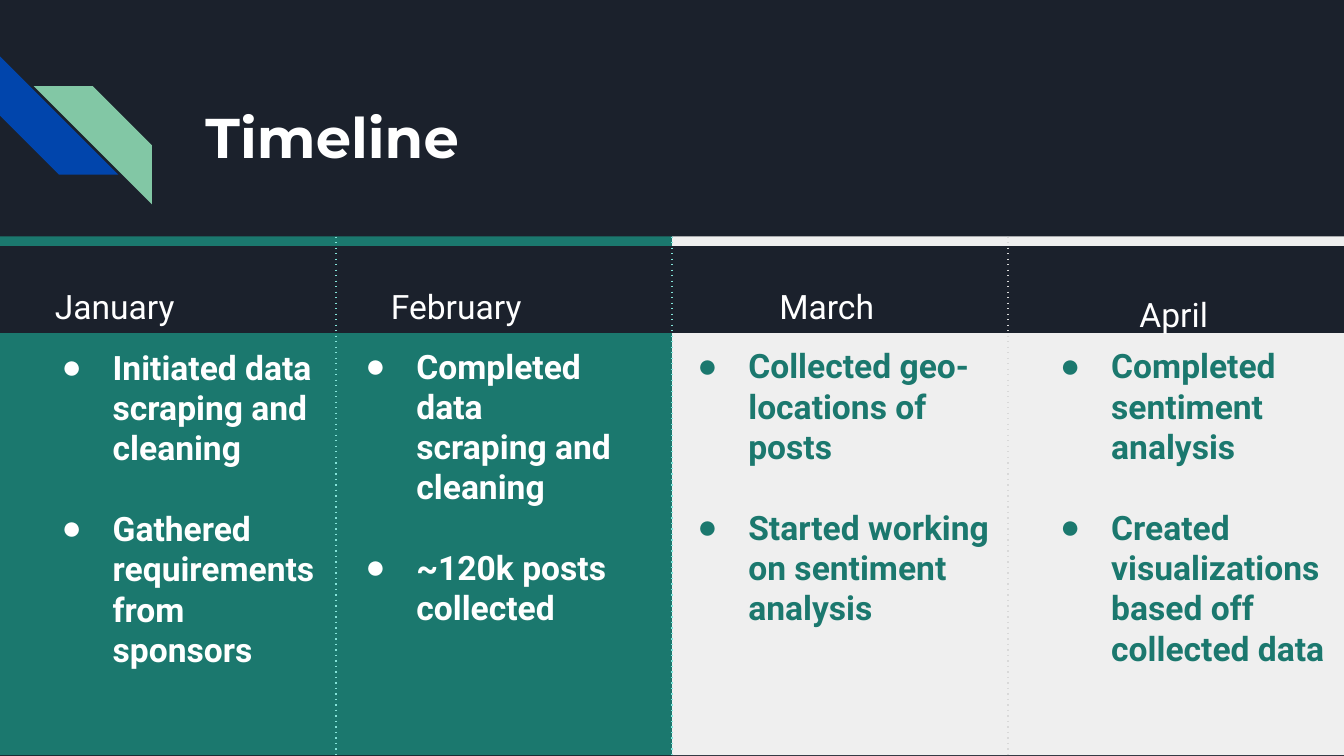
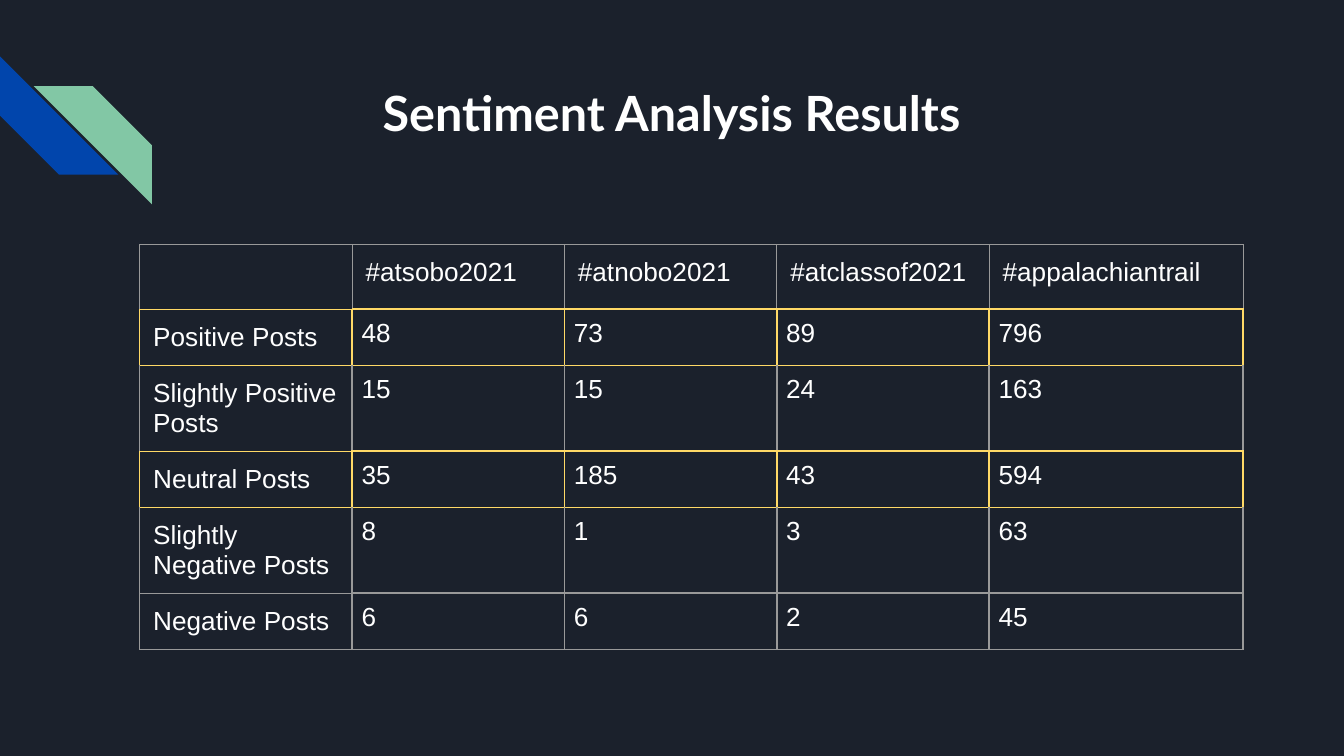
from dataclasses import dataclass

from lxml import etree
from pptx import Presentation
from pptx import util as u
from pptx.dml.color import RGBColor
from pptx.enum import shapes, text
from pptx.oxml.ns import qn


@dataclass(frozen=True)
class Theme:
    dark: str = "1B212C"
    white: str = "FFFFFF"
    teal: str = "1B786E"
    pale: str = "EFEFEF"
    blue: str = "0145AC"
    green: str = "82C7A5"
    aqua: str = "83E3D9"
    silver: str = "D9D9D9"
    grey: str = "999999"
    gold: str = "FFD966"
    heading_font: str = "Montserrat"
    result_font: str = "Lato"
    body_font: str = "Roboto"
    table_font: str = "Arial"
    bullet_font: str = "Arial"
    heading_size: float = 30
    result_size: float = 26
    body_size: float = 18
    table_size: float = 14
    bullet_gap: float = 21.6


def color(value):
    return RGBColor.from_string(value)


def box(*lengths):
    return [u.Inches(length) for length in lengths]


class Deck:
    def __init__(self, theme):
        self.theme = theme
        self.presentation = Presentation()
        # Widescreen, 16 to 9
        self.presentation.slide_width = u.Inches(10)
        self.presentation.slide_height = u.Inches(10 * 9 / 16)
        self.slide = None

    def add_slide(self):
        """Start a dark slide with the two corner stripes."""
        self.slide = self.presentation.slides.add_slide(self.presentation.slide_layouts[6])
        self.slide.background.fill.solid()
        self.slide.background.fill.fore_color.rgb = color(self.theme.dark)
        stripe = shapes.MSO_SHAPE.DIAGONAL_STRIPE
        lower = self.shape((0, 0.42, 0.88, 0.88), self.theme.blue, stripe)
        lower.rotation = 270
        upper = self.shape((0.25, 0.64, 0.88, 0.88), self.theme.green, stripe)
        upper.element.spPr.find(qn("a:xfrm")).set("flipH", "1")

    def shape(self, at, fill, kind=shapes.MSO_SHAPE.RECTANGLE):
        shape = self.slide.shapes.add_shape(kind, *box(*at))
        shape.shadow.inherit = False
        shape.fill.solid()
        shape.fill.fore_color.rgb = color(fill)
        shape.line.fill.background()
        return shape

    def style(self, paragraph, font, size, fill, bold=False):
        for run in paragraph.runs:
            run.font.name, run.font.size, run.font.bold = font, u.Pt(size), bold
            run.font.color.rgb = color(fill)

    def frame(self, shape, inset=0.1):
        frame = shape.text_frame
        frame.word_wrap = True
        frame.vertical_anchor = text.MSO_ANCHOR.TOP
        frame.margin_left = frame.margin_right = u.Inches(inset)
        frame.margin_top = frame.margin_bottom = u.Inches(inset)
        return frame

    def label(self, at, words, font, size, bold=False, spacing=None):
        frame = self.frame(self.slide.shapes.add_textbox(*box(*at)))
        frame.text = words
        paragraph = frame.paragraphs[0]
        paragraph.line_spacing = spacing
        self.style(paragraph, font, size, self.theme.white, bold)

    def banner(self, at, words):
        """Centred title on a filled rectangle."""
        frame = self.frame(self.shape(at, self.theme.dark))
        frame.text = words
        frame.paragraphs[0].alignment = text.PP_ALIGN.CENTER
        self.style(frame.paragraphs[0], self.theme.result_font, self.theme.result_size,
                   self.theme.white, True)

    def bullets(self, at, items, fill):
        frame = self.frame(self.slide.shapes.add_textbox(*box(*at)))
        frame.text = "\n".join(items)
        for index, paragraph in enumerate(frame.paragraphs):
            if index:
                paragraph.space_before = u.Pt(self.theme.bullet_gap)
            properties = paragraph._p.get_or_add_pPr()
            properties.set("marL", str(u.Inches(0.5)))
            properties.set("indent", str(u.Inches(-0.38)))
            bullet_color = etree.SubElement(properties, qn("a:buClr"))
            etree.SubElement(bullet_color, qn("a:srgbClr"), val=fill)
            etree.SubElement(properties, qn("a:buFont"), typeface=self.theme.bullet_font)
            etree.SubElement(properties, qn("a:buChar"), char="●")
            self.style(paragraph, self.theme.body_font, self.theme.body_size, fill, True)

    def divider(self, x, top, bottom, fill):
        connector = self.slide.shapes.add_connector(
            shapes.MSO_CONNECTOR.STRAIGHT, *box(x, top, x, bottom))
        connector.line.color.rgb = color(fill)
        connector.line.width = u.Pt(0.75)
        properties = connector.element.spPr
        etree.SubElement(properties.find(qn("a:ln")), qn("a:prstDash"), val="dot")
        etree.SubElement(properties, qn("a:effectLst"))

    def border(self, cell, side, fill, width):
        line = etree.SubElement(cell._tc.get_or_add_tcPr(), qn("a:ln" + side),
                                w=str(u.Pt(width)))
        solid = etree.SubElement(line, qn("a:solidFill"))
        etree.SubElement(solid, qn("a:srgbClr"), val=fill)

    def fill_cell(self, cell, value, inset):
        cell.text = str(value)
        cell.margin_left = cell.margin_right = u.Inches(inset)
        cell.margin_top = cell.margin_bottom = u.Inches(inset)
        paragraph = cell.text_frame.paragraphs[0]
        size = self.theme.table_size
        self.style(paragraph, self.theme.table_font, size, self.theme.white)
        if not paragraph.runs:
            # An empty cell keeps the table's type size
            etree.SubElement(paragraph._p, qn("a:endParaRPr"), sz=str(size * 100))

    def table(self, left, top, widths, heights, rows, highlighted):
        at = box(left, top, sum(widths), sum(heights))
        table = self.slide.shapes.add_table(len(rows), len(widths), *at).table
        table.first_row = table.horz_banding = False
        for column, width in zip(table.columns, widths):
            column.width = u.Inches(width)
        for row, height in zip(table.rows, heights):
            row.height = u.Inches(height)
        sides = {"L": (0, -1), "R": (0, 1), "T": (-1, 0), "B": (1, 0)}
        for r, values in enumerate(rows):
            for c, value in enumerate(values):
                cell = table.cell(r, c)
                self.fill_cell(cell, value, 0.07 if r and c else 0.1)
                # Gold edges surround highlighted rows; value cells have thicker edges
                for side, (down, across) in sides.items():
                    gold = r in highlighted or r + down in highlighted
                    thick = min(r, c) > 0 or min(r + down, c + across) > 0
                    self.border(cell, side, self.theme.gold if gold else self.theme.grey,
                                1 if thick else 0.75)
                cell.fill.background()


def timeline(deck):
    theme = deck.theme
    deck.add_slide()
    deck.label((1.43, 0.66, 8.49, 1), "Timeline", theme.heading_font,
               theme.heading_size, True)
    # Month, label position, bullet box, colours, items
    done = (theme.teal, theme.white, theme.aqua)
    later = (theme.pale, theme.teal, theme.silver)
    months = [
        ("January", (0.31, 1.98), (0.24, 2.48, 2.21, 1.08), done,
         ["Initiated data scraping and cleaning", "Gathered requirements from sponsors"]),
        ("February", (2.81, 1.98), (2.5, 2.47, 2.15, 1.08), done,
         ["Completed data scraping and cleaning", "~120k posts collected"]),
        ("March", (5.7, 1.98), (4.97, 2.47, 2.7, 2.33), later,
         ["Collected geo-locations of posts", "Started working on sentiment analysis"]),
        ("April", (8.38, 2.04), (7.67, 2.47, 2.33, 0.87), later,
         ["Completed sentiment analysis", "Created visualizations based off collected data"]),
    ]
    # Right to left, so each divider lies over the next panel
    width = 2.5
    for index, (month, place, at, colors, items) in reversed(list(enumerate(months))):
        panel, ink, dots = colors
        left = index * width
        deck.shape((left, 2.48, width, 3.14), panel)
        deck.shape((left, 1.76, width, 0.07), panel)
        if index < len(months) - 1:
            deck.divider(left + width, 1.76, 5.61, dots)
        deck.label((*place, 1.89, 0.35), month, theme.body_font, theme.body_size,
                   spacing=1.15)
        deck.bullets(at, items, ink)


def sentiment_results(deck):
    deck.add_slide()
    rows = [
        ("", "#atsobo2021", "#atnobo2021", "#atclassof2021", "#appalachiantrail"),
        ("Positive Posts", 48, 73, 89, 796),
        ("Slightly Positive Posts", 15, 15, 24, 163),
        ("Neutral Posts", 35, 185, 43, 594),
        ("Slightly Negative Posts", 8, 1, 3, 63),
        ("Negative Posts", 6, 6, 2, 45),
    ]
    deck.table(1.04, 1.82, [1.58] * 4 + [1.89], [0.48, 0.42, 0.63, 0.42, 0.63, 0.42],
               rows, highlighted=(1, 3))
    deck.banner((2.37, 0.52, 5.26, 0.64), "Sentiment Analysis Results")


def main():
    deck = Deck(Theme())
    timeline(deck)
    sentiment_results(deck)
    deck.presentation.save("out.pptx")


if __name__ == "__main__":
    main()
